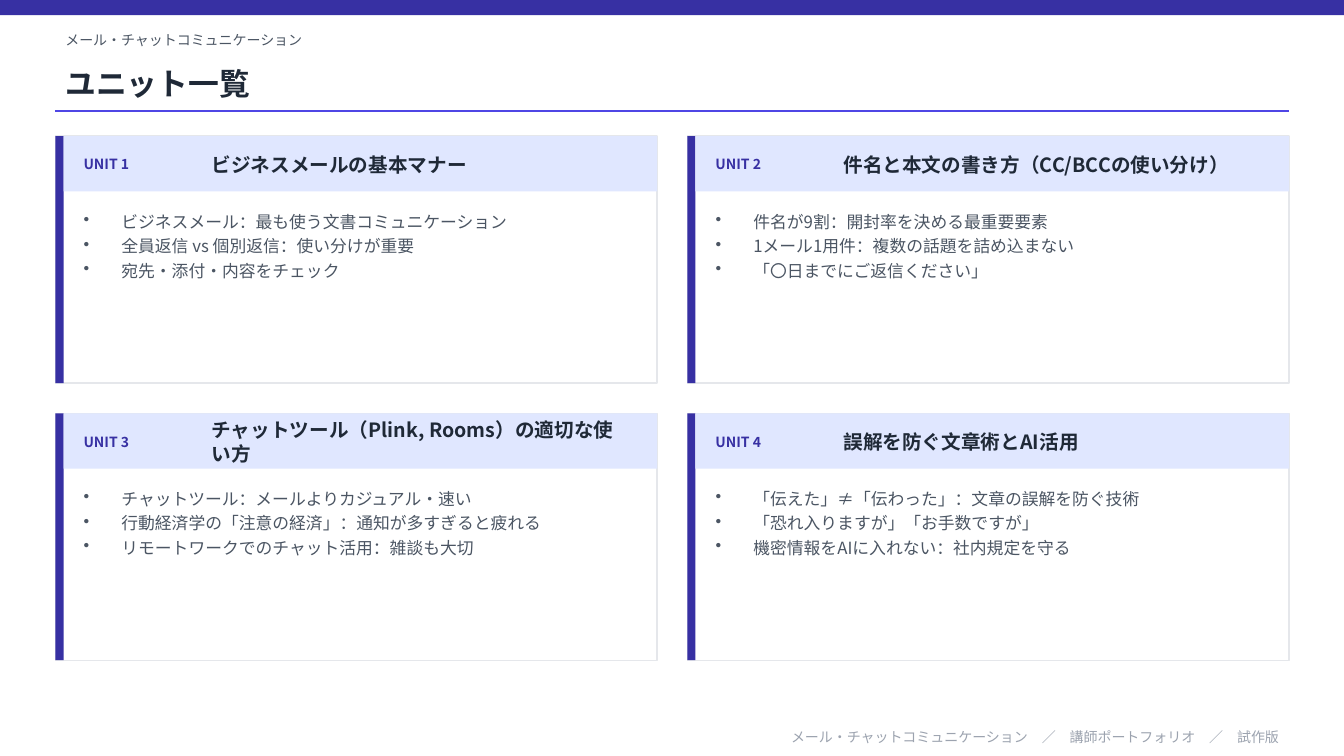
from dataclasses import dataclass

from lxml import etree
from pptx import Presentation
from pptx.dml.color import RGBColor
from pptx.enum import shapes, text
from pptx.oxml import ns
from pptx.util import Pt

FONT = "Noto Sans CJK JP"
INDIGO = RGBColor(0x37, 0x30, 0xA3)
RULE = RGBColor(0x4F, 0x46, 0xE5)
PALE = RGBColor(0xE0, 0xE7, 0xFF)
WHITE = RGBColor(0xFF, 0xFF, 0xFF)
BORDER = RGBColor(0xE5, 0xE7, 0xEB)
INK = RGBColor(0x1F, 0x29, 0x37)
SLATE = RGBColor(0x4B, 0x55, 0x63)
MUTED = RGBColor(0x9C, 0xA3, 0xAF)

SLIDE_WIDTH, SLIDE_HEIGHT = 960, 540
MARGIN, CONTENT_WIDTH = 39.6, 880.8
CARD_TOP, CARD_WIDTH, CARD_HEIGHT = 97.2, 429.8, 176.4
COLUMN_PITCH, ROW_PITCH = 451.4, 198
STRIPE_WIDTH, HEADER_HEIGHT = 5.8, 39.6
BULLET_INDENT = 27


@dataclass(frozen=True)
class Box:
    left: float
    top: float
    width: float
    height: float

    def lengths(self) -> tuple:
        return Pt(self.left), Pt(self.top), Pt(self.width), Pt(self.height)


@dataclass(frozen=True)
class Style:
    size: float
    color: RGBColor
    bold: bool = False


@dataclass(frozen=True)
class Unit:
    heading: str
    points: tuple[str, ...]


CAPTION = Style(10, SLATE)
TITLE = Style(22, INK, True)
UNIT_LABEL = Style(10, INDIGO, True)
UNIT_HEADING = Style(14, INK, True)
BODY = Style(12, SLATE)
FOOTER = Style(10, MUTED)

UNITS = (
    Unit("ビジネスメールの基本マナー", (
        "ビジネスメール：最も使う文書コミュニケーション",
        "全員返信 vs 個別返信：使い分けが重要",
        "宛先・添付・内容をチェック",
    )),
    Unit("件名と本文の書き方（CC/BCCの使い分け）", (
        "件名が9割：開封率を決める最重要要素",
        "1メール1用件：複数の話題を詰め込まない",
        "「〇日までにご返信ください」",
    )),
    Unit("チャットツール（Plink, Rooms）の適切な使い方", (
        "チャットツール：メールよりカジュアル・速い",
        "行動経済学の「注意の経済」：通知が多すぎると疲れる",
        "リモートワークでのチャット活用：雑談も大切",
    )),
    Unit("誤解を防ぐ文章術とAI活用", (
        "「伝えた」≠「伝わった」：文章の誤解を防ぐ技術",
        "「恐れ入りますが」「お手数ですが」",
        "機密情報をAIに入れない：社内規定を守る",
    )),
)


def add_run(paragraph, wording: str, style: Style) -> None:
    run = paragraph.add_run()
    run.text = wording
    run.font.name = FONT
    run.font.size = Pt(style.size)
    run.font.bold = style.bold
    run.font.color.rgb = style.color
    properties = run._r.get_or_add_rPr()
    etree.SubElement(properties, ns.qn("a:ea")).set("typeface", FONT)


def fill_frame(frame, wording: str, style: Style, alignment=text.PP_ALIGN.LEFT) -> None:
    frame.word_wrap = True
    frame.auto_size = text.MSO_AUTO_SIZE.NONE
    frame.vertical_anchor = text.MSO_ANCHOR.MIDDLE
    paragraph = frame.paragraphs[0]
    paragraph.alignment = alignment
    add_run(paragraph, wording, style)


def add_text(slide, box: Box, wording: str, style: Style, alignment=text.PP_ALIGN.LEFT) -> None:
    frame = slide.shapes.add_textbox(*box.lengths()).text_frame
    fill_frame(frame, wording, style, alignment)


def add_bullets(slide, box: Box, points: tuple[str, ...]) -> None:
    frame = slide.shapes.add_textbox(*box.lengths()).text_frame
    frame.word_wrap = True
    for index, point in enumerate(points):
        paragraph = frame.add_paragraph() if index else frame.paragraphs[0]
        properties = paragraph._p.get_or_add_pPr()
        properties.set("marL", str(Pt(BULLET_INDENT)))
        properties.set("indent", str(-Pt(BULLET_INDENT)))
        etree.SubElement(properties, ns.qn("a:buChar")).set("char", "•")
        paragraph.space_after = Pt(3)
        add_run(paragraph, point, BODY)


def add_rectangle(slide, box: Box, fill: RGBColor, border: RGBColor | None = None) -> None:
    shape = slide.shapes.add_shape(shapes.MSO_SHAPE.RECTANGLE, *box.lengths())
    shape.shadow.inherit = False
    shape.fill.solid()
    shape.fill.fore_color.rgb = fill
    if border is None:
        shape.line.fill.background()
    else:
        shape.line.color.rgb = border
        shape.line.width = Pt(1)


def add_title(slide, box: Box, wording: str) -> None:
    title = slide.shapes.title
    title.left, title.top, title.width, title.height = box.lengths()
    fill_frame(title.text_frame, wording, TITLE)


def add_rule(slide, top: float) -> None:
    rule = slide.shapes.add_connector(
        shapes.MSO_CONNECTOR.STRAIGHT,
        Pt(MARGIN), Pt(top), Pt(MARGIN + CONTENT_WIDTH), Pt(top),
    )
    rule.line.color.rgb = RULE
    rule.line.width = Pt(1)
    etree.SubElement(rule._element.spPr, ns.qn("a:effectLst"))


def add_card(slide, index: int, unit: Unit) -> None:
    row, column = divmod(index, 2)
    left = MARGIN + column * COLUMN_PITCH
    top = CARD_TOP + row * ROW_PITCH
    add_rectangle(slide, Box(left, top, CARD_WIDTH, CARD_HEIGHT), WHITE, BORDER)
    add_rectangle(slide, Box(left, top, STRIPE_WIDTH, CARD_HEIGHT), INDIGO)
    header = Box(left + STRIPE_WIDTH, top, CARD_WIDTH - STRIPE_WIDTH, HEADER_HEIGHT)
    add_rectangle(slide, header, PALE)
    add_text(slide, Box(left + 13, top + 5.8, 86.4, 28.8), f"UNIT {index + 1}", UNIT_LABEL)
    add_text(slide, Box(left + 104.4, top + 5.8, 314.6, 28.8), unit.heading, UNIT_HEADING)
    add_bullets(slide, Box(left + 13, top + 50.4, 403.9, 115.2), unit.points)


def main() -> None:
    presentation = Presentation()
    presentation.slide_width = Pt(SLIDE_WIDTH)
    presentation.slide_height = Pt(SLIDE_HEIGHT)
    slide = presentation.slides.add_slide(presentation.slide_layouts[5])

    add_rectangle(slide, Box(0, 0, SLIDE_WIDTH, 10.8), INDIGO)
    add_text(slide, Box(MARGIN, 18, CONTENT_WIDTH, 21.6), "メール・チャットコミュニケーション", CAPTION)
    add_title(slide, Box(MARGIN, 39.6, CONTENT_WIDTH, 39.6), "ユニット一覧")
    add_rule(slide, 79.2)
    for index, unit in enumerate(UNITS):
        add_card(slide, index, unit)
    add_text(
        slide,
        Box(MARGIN, 518.4, CONTENT_WIDTH, 15.8),
        "メール・チャットコミュニケーション　／　講師ポートフォリオ　／　試作版",
        FOOTER,
        text.PP_ALIGN.RIGHT,
    )
    presentation.save("out.pptx")


if __name__ == "__main__":
    main()
